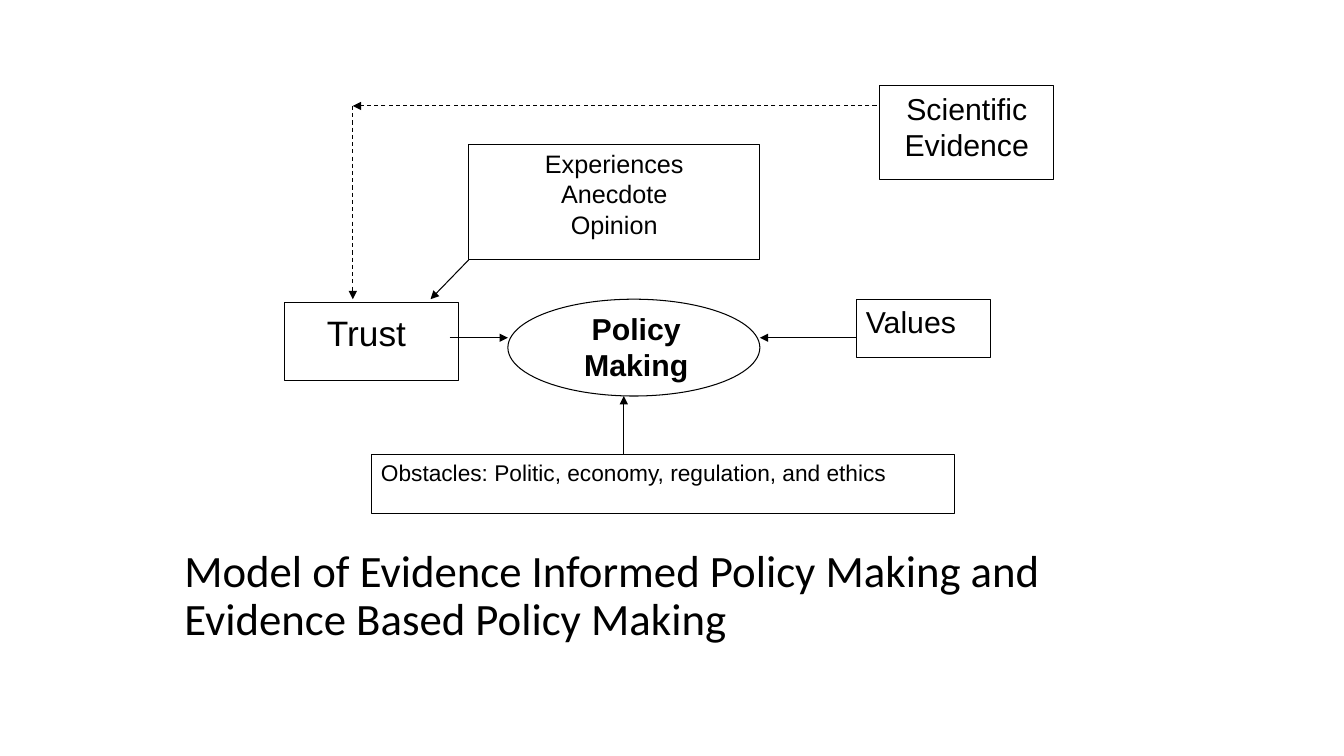
from lxml.etree import SubElement
from pptx import Presentation
from pptx.dml.color import RGBColor
from pptx.enum.dml import MSO_LINE
from pptx.enum.shapes import MSO_CONNECTOR, MSO_SHAPE
from pptx.enum.text import MSO_ANCHOR, MSO_AUTO_SIZE, PP_ALIGN
from pptx.oxml.ns import qn
from pptx.util import Cm, Pt

BLACK, WHITE = "000000", "FFFFFF"
LEFT, CENTER = PP_ALIGN.LEFT, PP_ALIGN.CENTER


def color(value):
    return RGBColor.from_string(value)


def format_text(tf, font, size, align, bold=False):
    tf.word_wrap = True
    for p in tf.paragraphs:
        p.alignment = align
        for r in p.runs:
            r.font.name = font
            r.font.size = Pt(size)
            r.font.bold = bold
            r.font.color.rgb = color(BLACK)


def add_outline(line):
    line.color.rgb = color(BLACK)
    line.width = Pt(0.75)


def add_node(s, kind, box, filled=True, outlined=True):
    node = s.shapes.add_shape(kind, *map(Cm, box))
    node.shadow.inherit = False
    if filled:
        node.fill.solid()
        node.fill.fore_color.rgb = color(WHITE)
    else:
        node.fill.background()
    if outlined:
        add_outline(node.line)
    else:
        node.line.fill.background()
    return node


def add_label(s, box, text, size, align, bold=False, outlined=True, inset=(0.23, 0.11)):
    node = add_node(s, MSO_SHAPE.RECTANGLE, box, outlined=outlined)
    tf = node.text_frame
    tf.text = text
    tf.vertical_anchor = MSO_ANCHOR.TOP
    tf.margin_left, tf.margin_top = map(Cm, inset)
    tf.margin_right, tf.margin_bottom = Cm(0.23), Cm(0.11)
    format_text(tf, "Arial", size, align, bold)


def add_arrow(s, start, end, dashed=False):
    arrow = s.shapes.add_connector(MSO_CONNECTOR.STRAIGHT, *map(Cm, start + end))
    add_outline(arrow.line)
    if dashed:
        arrow.line.dash_style = MSO_LINE.DASH
    ln = arrow.line._get_or_add_ln()
    SubElement(ln, qn("a:tailEnd"), type="triangle")
    SubElement(arrow._element.spPr, qn("a:effectLst"))


def add_title(s, box):
    title = s.shapes.title
    title.left, title.top, title.width, title.height = map(Cm, box)
    tf = title.text_frame
    tf.text = "Model of Evidence Informed Policy Making and Evidence Based Policy Making"
    tf.auto_size = MSO_AUTO_SIZE.NONE
    tf.vertical_anchor = MSO_ANCHOR.BOTTOM
    tf.paragraphs[0].line_spacing = 0.9
    format_text(tf, "Calibri", 32, LEFT)


def add_model(s, box):
    left, top, width, height = box

    def at(x, y):
        return left + x, top + y

    evidence_w, obstacles_h = 4.39, 1.47
    evidence_x, obstacles_y = width - evidence_w, height - obstacles_h
    row_y, flow_y, detour_x, detour_y = 5.38, 6.35, 1.73, 0.51
    oval_x, oval_w, oval_h = 5.64, 6.35, 2.44
    values_x, obstacles_arrow_x = 14.43, 8.56
    views_x, views_y, views_w, views_h = 4.65, 1.47, 7.34, 2.92

    add_label(s, (*at(evidence_x, 0), evidence_w, 2.36), "Scientific Evidence", 21.6, CENTER)
    add_label(s, (*at(values_x, row_y), 3.38, 1.47), "Values", 21.6, LEFT)
    add_label(s, (*at(0, 5.46), 4.39, 1.96), "Trust", 25.2, LEFT, inset=(1.08, 0.22))
    add_label(s, (*at(views_x, views_y), views_w, views_h),
              "Experiences\nAnecdote\nOpinion", 18, CENTER)
    add_label(s, (*at(2.21, obstacles_y), 14.68, obstacles_h),
              "Obstacles: Politic, economy, regulation, and ethics", 16.2, LEFT)
    add_label(s, (*at(7.01, 5.54), 3.73, 1.96), "Policy Making", 21.6, CENTER,
              bold=True, outlined=False)
    add_node(s, MSO_SHAPE.OVAL, (*at(oval_x, row_y), oval_w, oval_h), filled=False)

    add_arrow(s, at(4.17, flow_y), at(oval_x, flow_y))
    add_arrow(s, at(values_x, flow_y), at(oval_x + oval_w, flow_y))
    add_arrow(s, at(evidence_x - 0.08, detour_y), at(detour_x, detour_y), dashed=True)
    add_arrow(s, at(detour_x, detour_y), at(detour_x, row_y), dashed=True)
    add_arrow(s, at(obstacles_arrow_x, obstacles_y), at(obstacles_arrow_x, row_y + oval_h))
    add_arrow(s, at(views_x, views_y + views_h), at(3.69, row_y))


def main():
    prs = Presentation()
    prs.slide_width, prs.slide_height = Cm(33.87), Cm(19.05)
    s = prs.slides.add_slide(prs.slide_layouts[5])
    add_title(s, (4.39, 12.4, 25.68, 3.99))
    add_model(s, (7.16, 2.16, 19.4, 10.77))
    prs.save("out.pptx")


if __name__ == "__main__":
    main()
